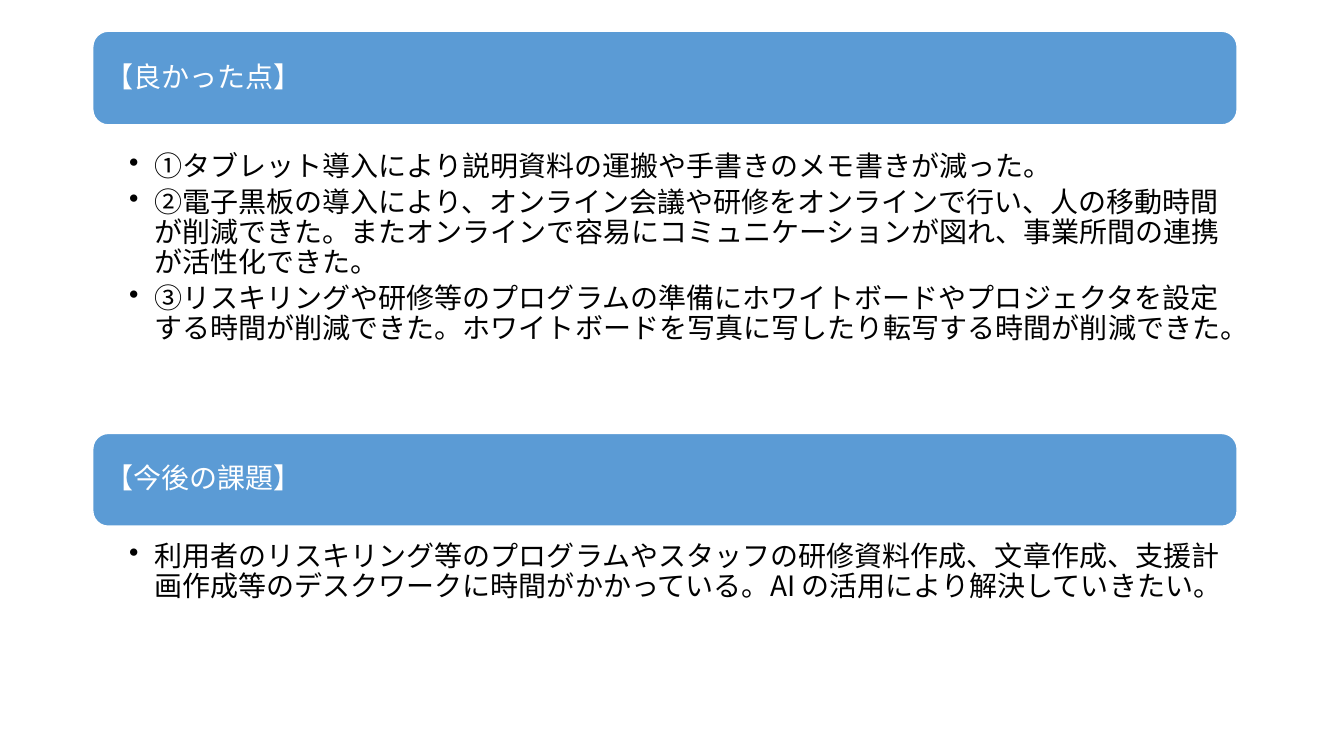
"""Build a slide with two headed sections: good points and future issues."""
from lxml import etree
from pptx import Presentation
from pptx import util as u
from pptx.dml.color import RGBColor
from pptx.enum import shapes, text
from pptx.oxml import ns

PX = 9144
FONT = "Noto Sans CJK JP"
LEFT, WIDTH = 92, 1135


def color(value):
    return RGBColor.from_string(value)


def add_text(para, wording, ink, gap):
    para.alignment = text.PP_ALIGN.LEFT
    para.line_spacing = 0.9
    para.space_after = u.Pt(gap)
    span = para.add_run()
    span.text = wording
    span.font.size = u.Pt(20)
    span.font.color.rgb = color(ink)
    span.font.name = FONT
    etree.SubElement(span.font._element, ns.qn("a:ea"), typeface=FONT)


sections = [
    ("【良かった点】", 31, 93, 148, 254, [
        "①タブレット導入により説明資料の運搬や手書きのメモ書きが減った。",
        "②電子黒板の導入により、オンライン会議や研修をオンラインで行い、人の移動時間が削減できた。"
        "またオンラインで容易にコミュニケーションが図れ、事業所間の連携が活性化できた。",
        "③リスキリングや研修等のプログラムの準備にホワイトボードやプロジェクタを設定する時間が削減できた。"
        "ホワイトボードを写真に写したり転写する時間が削減できた。",
    ]),
    ("【今後の課題】", 430, 92, 535, 131, [
        "利用者のリスキリング等のプログラムやスタッフの研修資料作成、文章作成、"
        "支援計画作成等のデスクワークに時間がかかっている。AI の活用により解決していきたい。",
    ]),
]

deck = Presentation()
deck.slide_width, deck.slide_height = 1333 * PX, 750 * PX
page = deck.slides.add_slide(deck.slide_layouts[6])

for heading, bar_top, bar_height, list_top, list_height, points in sections:
    bar = page.shapes.add_shape(
        shapes.MSO_SHAPE.ROUNDED_RECTANGLE,
        LEFT * PX, bar_top * PX, WIDTH * PX, bar_height * PX)
    bar.shadow.inherit = False
    bar.fill.solid()
    bar.fill.fore_color.rgb = color("5B9BD5")
    bar.line.color.rgb = color("FFFFFF")
    bar.line.width = u.Pt(1)
    frame = bar.text_frame
    frame.word_wrap = True
    frame.vertical_anchor = text.MSO_ANCHOR.MIDDLE
    frame.margin_left = frame.margin_right = 8 * PX
    frame.margin_top = frame.margin_bottom = 8 * PX
    add_text(frame.paragraphs[0], heading, "FFFFFF", 7)

    box = page.shapes.add_textbox(LEFT * PX, list_top * PX, WIDTH * PX, list_height * PX)
    frame = box.text_frame
    frame.word_wrap = True
    frame.margin_left, frame.margin_right = 36 * PX, 16 * PX
    frame.margin_top = frame.margin_bottom = 3 * PX
    for number, point in enumerate(points):
        para = frame.add_paragraph() if number else frame.paragraphs[0]
        add_text(para, point, "000000", 4)
        layout = para._p.get_or_add_pPr()
        layout.set("marL", str(25 * PX))
        layout.set("indent", str(-25 * PX))
        etree.SubElement(layout, ns.qn("a:buChar"), char="•")

deck.save("out.pptx")
